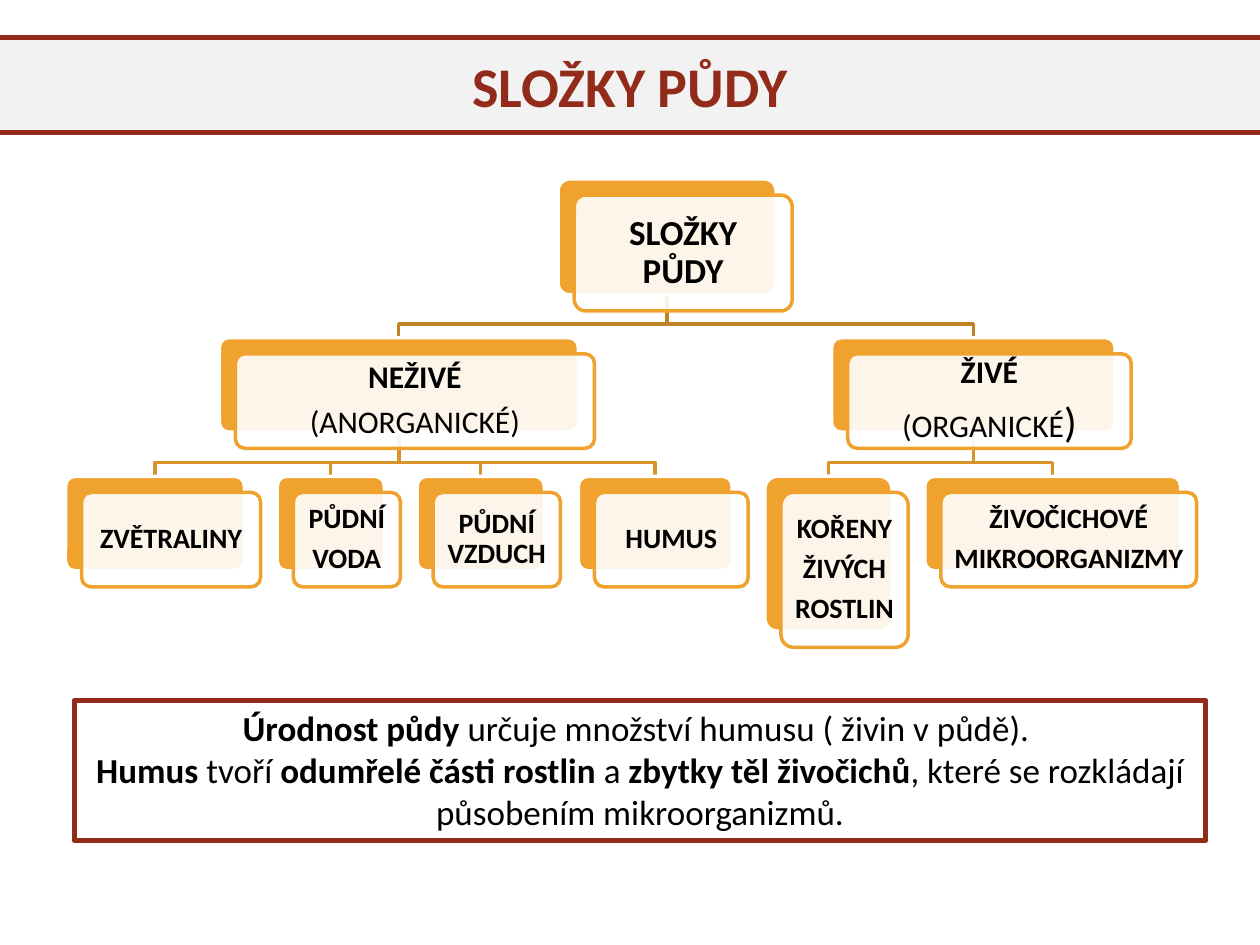
from collections import namedtuple

from lxml.etree import SubElement
from pptx import Presentation
from pptx.dml.color import RGBColor
from pptx.enum.shapes import MSO_SHAPE as Shape
from pptx.enum.text import MSO_ANCHOR as Anchor, MSO_AUTO_SIZE as AutoSize, PP_ALIGN as Align
from pptx.oxml.ns import qn
from pptx.util import Inches, Pt

COLORS = {
    "brick": "922B1A", "band": "F2F2F2", "amber": "F0A22E", "white": "FFFFFF",
    "black": "000000", "upper_link": "C08225", "lower_link": "DA932A",
}
FONT = "Calibri"
COLUMNS, ROWS = 100, 75
WIDTH, HEIGHT = Inches(10), Inches(7.5)
OFFSET = 1.28
RISE = 1.1
LEVEL_TOPS = (14.2, 26.8, 37.8)
LEVEL_SIZES = (20, 18, 16)
LEVEL_INSETS = (0.8, 0.7, 0.7)
LINK_COLORS = (None, "upper_link", "lower_link")

Node = namedtuple("Node", "level left width height lines children")


def leaf(left, width, lines, height=7.5):
    """Return a bottom-level node whose lines are all bold."""
    return Node(2, left, width, height, [[(line, True)] for line in lines], [])


NONLIVING = Node(1, 17.4, 28.5, 7.5, [[("NEŽIVÉ", True)], [("(ANORGANICKÉ)", False)]], [
    leaf(5.2, 14.2, ["ZVĚTRALINY"]),
    leaf(22, 8.5, ["PŮDNÍ", "VODA"]),
    leaf(33.1, 10.1, ["PŮDNÍ VZDUCH"]),
    leaf(45.9, 12.2, ["HUMUS"]),
])
LIVING = Node(1, 66, 22.5, 7.5, [[("ŽIVÉ", True)], [("(ORGANICKÉ", False), (")", False, 24)]], [
    leaf(60.7, 10.1, ["KOŘENY", "ŽIVÝCH", "ROSTLIN"], 12.3),
    leaf(73.4, 20.3, ["ŽIVOČICHOVÉ", "MIKROORGANIZMY"]),
])
SOIL = Node(0, 44.3, 17.3, 9.2, [[("SLOŽKY PŮDY", True)]], [NONLIVING, LIVING])

SUMMARY = [
    [("Úrodnost půdy ", True), ("určuje množství humusu ( živin v půdě). ", False)],
    [("Humus", True), (" tvoří ", False), ("odumřelé části rostlin ", True), ("a ", False),
     ("zbytky těl živočichů", True),
     (", které se rozkládají působením mikroorganizmů.", False)],
]


def across(columns):
    """Convert grid columns to a length."""
    return round(WIDTH * columns / COLUMNS)


def down(rows):
    """Convert grid rows to a length."""
    return round(HEIGHT * rows / ROWS)


def color(name):
    """Look up a named colour."""
    return RGBColor.from_string(COLORS[name])


def add_box(page, kind, left, top, width, height, fill, line, weight):
    """Add a filled or hollow outlined shape."""
    box = page.shapes.add_shape(kind, across(left), down(top), across(width), down(height))
    box.shadow.inherit = False
    if fill:
        box.fill.solid()
        box.fill.fore_color.rgb = color(fill)
    else:
        box.fill.background()
    box.line.color.rgb = color(line)
    box.line.width = Pt(weight)
    return box


def write(box, lines, size, ink="black", anchor=Anchor.MIDDLE, spaced=False):
    """Write centred paragraphs of (text, bold, optional size) runs."""
    frame = box.text_frame
    frame.word_wrap = True
    frame.vertical_anchor = anchor
    for index, line in enumerate(lines):
        para = frame.add_paragraph() if index else frame.paragraphs[0]
        para.alignment = Align.CENTER
        if spaced:
            para.line_spacing = 0.9
            para.space_after = Pt(0.35 * size)
        for text, bold, *special in line:
            span = para.add_run()
            span.text = text
            span.font.name = FONT
            span.font.size = Pt(special[0] if special else size)
            span.font.bold = bold
            span.font.color.rgb = color(ink)


def add_link(page, parent, child):
    """Draw an elbow line from a parent card down to a child card."""
    start, end = (across(node.left + node.width / 2) for node in (parent, child))
    top = down(LEVEL_TOPS[parent.level] + parent.height)
    bottom = down(LEVEL_TOPS[child.level])
    bend = bottom - down(RISE)
    builder = page.shapes.build_freeform(start, top)
    builder.add_line_segments([(start, bend), (end, bend), (end, bottom)], close=False)
    link = builder.convert_to_shape()
    link.shadow.inherit = False
    link.fill.background()
    link.line.color.rgb = color(LINK_COLORS[child.level])
    link.line.width = Pt(2)


def add_links(page, node):
    """Draw every link below a node."""
    for child in node.children:
        add_links(page, child)
        add_link(page, node, child)


def add_card(page, node):
    """Add an amber card with a translucent labelled panel on top."""
    top = LEVEL_TOPS[node.level]
    back = add_box(page, Shape.ROUNDED_RECTANGLE, node.left, top, node.width, node.height,
                   "amber", "white", 2)
    panel = add_box(page, Shape.ROUNDED_RECTANGLE, node.left + OFFSET, top + OFFSET,
                    node.width, node.height, "white", "amber", 2)
    for card in (back, panel):
        card.adjustments[0] = 0.1
    tint = panel.fill._xPr.find(qn("a:solidFill"))[0]
    SubElement(tint, qn("a:alpha")).set("val", "90000")
    frame = panel.text_frame
    inset = LEVEL_INSETS[node.level]
    frame.margin_left = frame.margin_right = across(inset)
    frame.margin_top = frame.margin_bottom = down(inset)
    write(panel, node.lines, LEVEL_SIZES[node.level], spaced=True)


def add_cards(page, node):
    """Add a node's card and all the cards below it."""
    add_card(page, node)
    for child in node.children:
        add_cards(page, child)


def main():
    """Build the soil components slide."""
    deck = Presentation()
    deck.slide_width, deck.slide_height = WIDTH, HEIGHT
    page = deck.slides.add_slide(deck.slide_layouts[6])
    title = add_box(page, Shape.RECTANGLE, -1.2, 3, 102.4, 7.5, "band", "brick", 3)
    write(title, [[("SLOŽKY PŮDY", True)]], 32, "brick")
    add_links(page, SOIL)
    add_cards(page, SOIL)
    summary = add_box(page, Shape.RECTANGLE, 5.9, 55.6, 89.8, 11.1, None, "brick", 3)
    write(summary, SUMMARY, 20, anchor=Anchor.TOP)
    summary.text_frame.auto_size = AutoSize.SHAPE_TO_FIT_TEXT
    deck.save("out.pptx")


if __name__ == "__main__":
    main()
